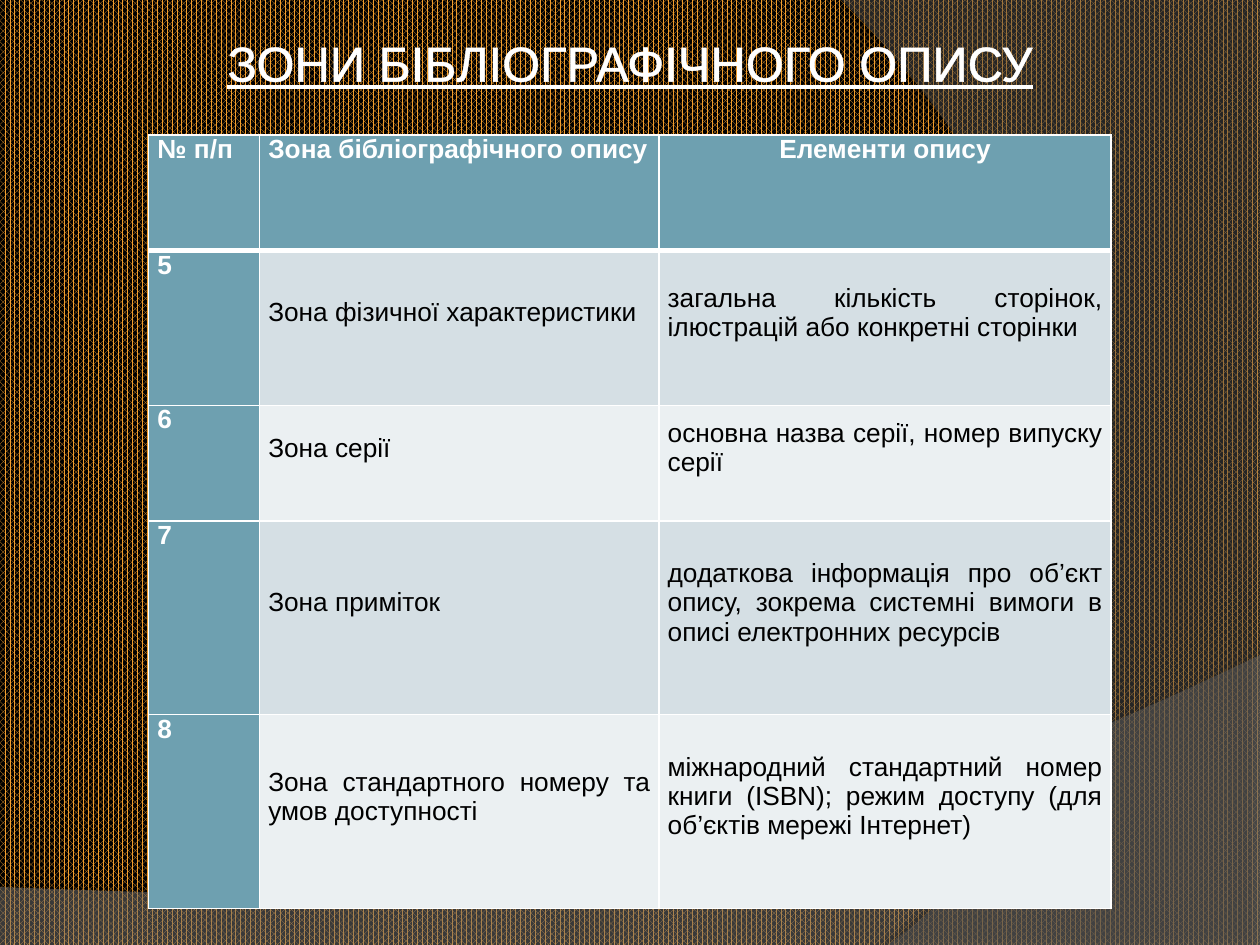
from dataclasses import dataclass

import lxml.etree
import pptx
import pptx.dml.color
import pptx.enum.dml
import pptx.enum.text
import pptx.oxml
import pptx.oxml.ns
import pptx.util

Inches = pptx.util.Inches
Pt = pptx.util.Pt
Align = pptx.enum.text.PP_ALIGN
Anchor = pptx.enum.text.MSO_ANCHOR
qn = pptx.oxml.ns.qn


@dataclass(frozen=True)
class Theme:
    font: str = "Arial"
    title_size: float = 28
    table_size: float = 15
    white: str = "FFFFFF"
    black: str = "000000"
    pattern: str = "F19D2D"
    lower_wave: str = "7F7F7F"
    right_wave: str = "5E5E5E"
    header: str = "6EA0B0"
    bands: tuple = ("D5DFE4", "EBF0F2")


THEME = Theme()
TITLE = "ЗОНИ БІБЛІОГРАФІЧНОГО ОПИСУ"
HEADINGS = ("№ п/п", "Зона бібліографічного опису", "Елементи опису")
ZONES = (
    ("5", "Зона фізичної характеристики",
     "загальна кількість сторінок, ілюстрацій або конкретні сторінки"),
    ("6", "Зона серії", "основна назва серії, номер випуску серії"),
    ("7", "Зона приміток",
     "додаткова інформація про об’єкт опису, зокрема системні вимоги в описі електронних ресурсів"),
    ("8", "Зона стандартного номеру та умов доступності",
     "міжнародний стандартний номер книги (ISBN); режим доступу (для об’єктів мережі Інтернет)"),
)
COLUMN_WIDTHS = (0.88, 3.17, 3.59)
ROW_HEIGHTS = (0.92, 1.23, 0.92, 1.54, 1.54)


def rgb(color):
    return pptx.dml.color.RGBColor.from_string(color)


def add_color(parent, color, opacity=100):
    element = lxml.etree.SubElement(parent, qn("a:srgbClr"), val=color)
    if opacity < 100:
        lxml.etree.SubElement(element, qn("a:alpha"), val=str(opacity * 1000))


def make_line(tag, color, width):
    line = pptx.oxml.parse_xml(f"<{tag} {pptx.oxml.ns.nsdecls('a')}/>")
    line.set("w", str(Pt(width)))
    add_color(lxml.etree.SubElement(line, qn("a:solidFill")), color)
    return line


def write_text(frame, text, *, size, color, align, bold=False, underline=False, outline=None):
    frame.word_wrap = True
    paragraph = frame.paragraphs[0]
    paragraph.alignment = align
    run = paragraph.add_run()
    run.text = text
    font = run.font
    font.name, font.size, font.bold, font.underline = THEME.font, Pt(size), bold, underline
    font.fill.solid()
    font.fill.fore_color.rgb = rgb(color)
    if outline:
        run._r.get_or_add_rPr().insert(0, make_line("a:ln", color, outline))


def curve_points(start, first, second, end, steps=40):
    """Points along a cubic Bézier curve, after its start."""
    for step in range(1, steps + 1):
        t = step / steps
        weights = ((1 - t) ** 3, 3 * t * (1 - t) ** 2, 3 * t ** 2 * (1 - t), t ** 3)
        yield tuple(sum(w * point[axis] for w, point in zip(weights, (start, first, second, end)))
                    for axis in (0, 1))


def add_wave(slide, box, corners, curve, *, color, opacity, shadow_opacity, distance, direction):
    """Translucent wave; corners and curve are fractions of the box."""
    left, top, width, height = box
    outline = [(Inches(left + x * width), Inches(top + y * height))
               for x, y in (*corners, *curve_points(corners[-1], *curve))]
    builder = slide.shapes.build_freeform(*outline[0])
    builder.add_line_segments(outline[1:], close=True)
    wave = builder.convert_to_shape()
    wave.fill.solid()
    wave.fill.fore_color.rgb = rgb(color)
    wave.line.fill.background()
    wave.shadow.inherit = False
    properties = wave._element.spPr
    fill_color = properties.find(qn("a:solidFill"))[0]
    lxml.etree.SubElement(fill_color, qn("a:alpha"), val=str(opacity * 1000))
    shadow = lxml.etree.SubElement(
        properties.find(qn("a:effectLst")), qn("a:outerShdw"), blurRad=str(Pt(4)),
        dist=str(Pt(distance)), dir=str(direction * 60000), rotWithShape="0")
    add_color(shadow, THEME.black, shadow_opacity)


def add_background(slide, box):
    fill = slide.background.fill
    fill.patterned()
    fill.pattern = pptx.enum.dml.MSO_PATTERN.PERCENT_75
    fill.fore_color.rgb = rgb(THEME.pattern)
    fill.back_color.rgb = rgb(THEME.black)
    left, top, width, height = box
    add_wave(slide, (left, top + height - 2.3, width, 2.3),
             ((0, 0.8), (0, 1), (1, 1), (1, 0)),
             ((0.56, 0.91), (0.39, 0.86), (0, 0.8)),
             color=THEME.lower_wave, opacity=45, shadow_opacity=35, distance=3.5, direction=270)
    add_wave(slide, (left + width - 3.32, top, 3.32, height),
             ((0, 0), (1, 0), (1, 1), (0.11, 1)),
             ((0.67, 0.83), (0.84, 0.37), (0, 0)),
             color=THEME.right_wave, opacity=40, shadow_opacity=45, distance=4, direction=180)


def add_title(slide, box):
    title = slide.shapes.add_textbox(*map(Inches, box))
    title.text_frame.auto_size = pptx.enum.text.MSO_AUTO_SIZE.SHAPE_TO_FIT_TEXT
    write_text(title.text_frame, TITLE, size=THEME.title_size, color=THEME.white,
               align=Align.CENTER, underline=True, outline=1.45)


def set_borders(cell, row):
    """White borders, thicker between the header and the body."""
    widths = {"L": 1, "R": 1, "T": 3 if row == 1 else 1, "B": 3 if row == 0 else 1}
    properties = cell._tc.get_or_add_tcPr()
    for index, (side, width) in enumerate(widths.items()):
        properties.insert(index, make_line(f"a:ln{side}", THEME.white, width))


def format_cell(cell, text, row, column):
    heading = row == 0 or column == 0
    cell.margin_left = cell.margin_right = Inches(0.07)
    cell.margin_top = 0
    cell.margin_bottom = 0 if heading else Inches(0.24)
    cell.vertical_anchor = Anchor.TOP if heading else Anchor.MIDDLE
    cell.fill.solid()
    cell.fill.fore_color.rgb = rgb(THEME.header if heading else THEME.bands[(row - 1) % 2])
    write_text(cell.text_frame, text, size=THEME.table_size, bold=heading,
               color=THEME.white if heading else THEME.black,
               align=Align.CENTER if (row, column) == (0, 2) else Align.JUSTIFY)
    set_borders(cell, row)


def add_zone_table(slide, box):
    rows = (HEADINGS, *ZONES)
    table = slide.shapes.add_table(len(rows), len(HEADINGS), *map(Inches, box)).table
    table.first_col = True
    table.horz_banding = False
    for column, width in zip(table.columns, COLUMN_WIDTHS):
        column.width = Inches(box[2] * width / sum(COLUMN_WIDTHS))
    for row, height in zip(table.rows, ROW_HEIGHTS):
        row.height = Inches(box[3] * height / sum(ROW_HEIGHTS))
    for row, texts in enumerate(rows):
        for column, text in enumerate(texts):
            format_cell(table.cell(row, column), text, row, column)


def main():
    presentation = pptx.Presentation()
    presentation.slide_width, presentation.slide_height = Inches(10), Inches(7.5)
    slide = presentation.slides.add_slide(presentation.slide_layouts[6])
    add_background(slide, (0, 0, 10, 7.5))
    add_title(slide, (0.2, 0.21, 9.6, 0.57))
    add_zone_table(slide, (1.18, 1.07, 7.64, 6.14))
    presentation.save("out.pptx")


if __name__ == "__main__":
    main()
